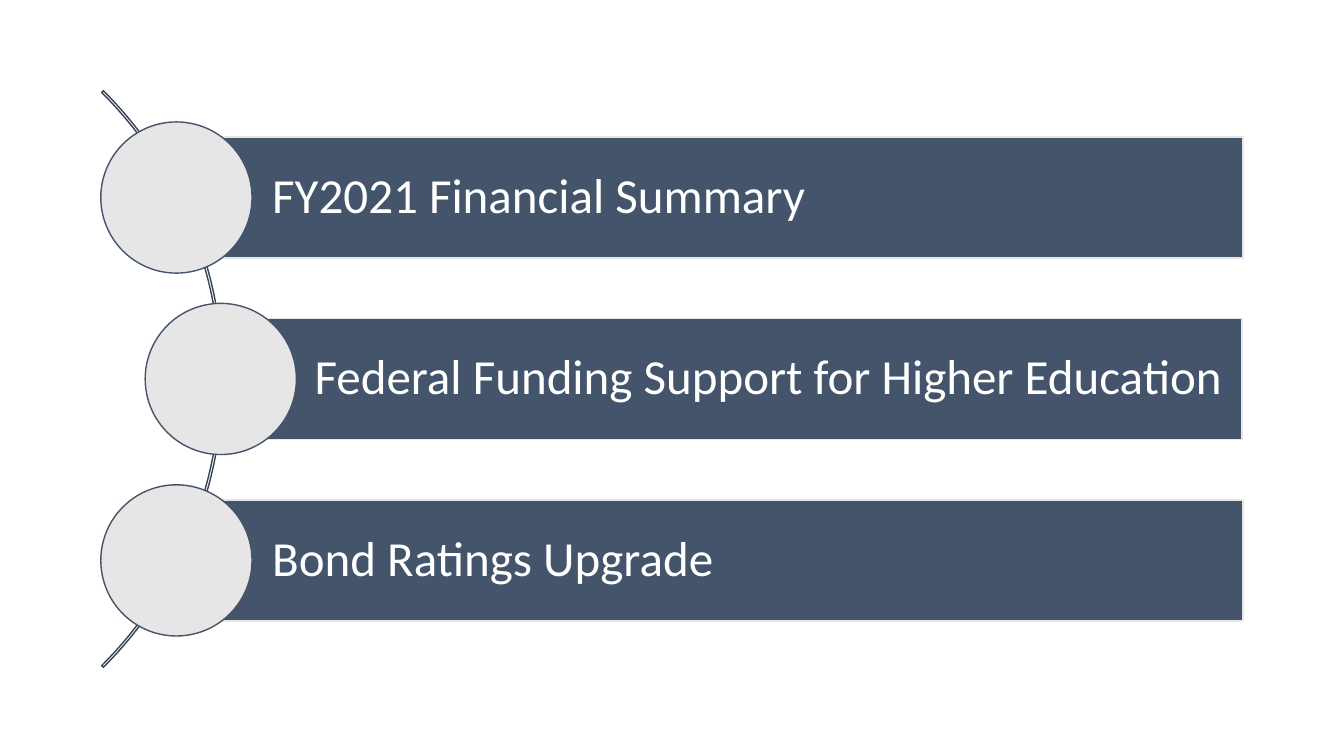
from dataclasses import dataclass

from pptx import Presentation
from pptx.dml.color import RGBColor
from pptx.enum.shapes import MSO_SHAPE
from pptx.enum.text import MSO_ANCHOR, PP_ALIGN
from pptx.shapes.autoshape import Shape
from pptx.slide import Slide
from pptx.util import Inches, Pt

NAVY = RGBColor(0x44, 0x54, 0x6A)
DARK_NAVY = RGBColor(0x36, 0x43, 0x55)
LIGHT_GREY = RGBColor(0xE7, 0xE6, 0xE6)
WHITE = RGBColor(0xFF, 0xFF, 0xFF)

MIDDLE = 3.76
PITCH = 1.8
BAR_HEIGHT = 1.2
CIRCLE = 1.5
ARC = 8.09


@dataclass(frozen=True)
class Topic:
    text: str
    circle_left: float
    bar_left: float
    bar_width: float


TOPICS = [
    Topic("FY2021 Financial Summary", 1, 1.75, 10.58),
    Topic("Federal Funding Support for Higher Education", 1.44, 2.17, 10.15),
    Topic("Bond Ratings Upgrade", 1, 1.75, 10.58),
]


def add_centred(slide: Slide, kind: MSO_SHAPE, left: float, centre: float,
                width: float, height: float, line: RGBColor,
                fill: RGBColor | None = None) -> Shape:
    """Add a shape whose vertical middle lies at centre."""
    sp = slide.shapes.add_shape(kind, Inches(left), Inches(centre - height / 2),
                                Inches(width), Inches(height))
    sp.shadow.inherit = False
    if fill is None:
        sp.fill.background()
    else:
        sp.fill.solid()
        sp.fill.fore_color.rgb = fill
    sp.line.color.rgb = line
    sp.line.width = Pt(1)
    return sp


def set_text(sp: Shape, text: str, *, size: float, color: RGBColor,
             font: str = "Calibri", left_inset: float = 0.1) -> None:
    tf = sp.text_frame
    tf.word_wrap = True
    tf.vertical_anchor = MSO_ANCHOR.MIDDLE
    tf.margin_left = Inches(left_inset)
    tf.margin_top = tf.margin_right = tf.margin_bottom = Inches(0.1)
    p = tf.paragraphs[0]
    p.alignment = PP_ALIGN.LEFT
    p.line_spacing = 0.9
    r = p.add_run()
    r.text = text
    r.font.name = font
    r.font.size = Pt(size)
    r.font.color.rgb = color


def add_topic(slide: Slide, topic: Topic, centre: float) -> None:
    bar = add_centred(slide, MSO_SHAPE.RECTANGLE, topic.bar_left, centre,
                      topic.bar_width, BAR_HEIGHT, LIGHT_GREY, NAVY)
    set_text(bar, topic.text, size=35, color=WHITE, left_inset=0.95)
    add_centred(slide, MSO_SHAPE.OVAL, topic.circle_left, centre,
                CIRCLE, CIRCLE, NAVY, LIGHT_GREY)


def main() -> None:
    prs = Presentation()
    prs.slide_width, prs.slide_height = Inches(13.33), Inches(7.5)
    slide = prs.slides.add_slide(prs.slide_layouts[6])

    arc = add_centred(slide, MSO_SHAPE.BLOCK_ARC, -5.88, MIDDLE, ARC, ARC, DARK_NAVY)
    for i, value in enumerate((189, 27, 0.003)):
        arc.adjustments[i] = value

    for i, topic in enumerate(TOPICS):
        add_topic(slide, topic, MIDDLE + (i - 1) * PITCH)

    prs.save("out.pptx")


if __name__ == "__main__":
    main()
